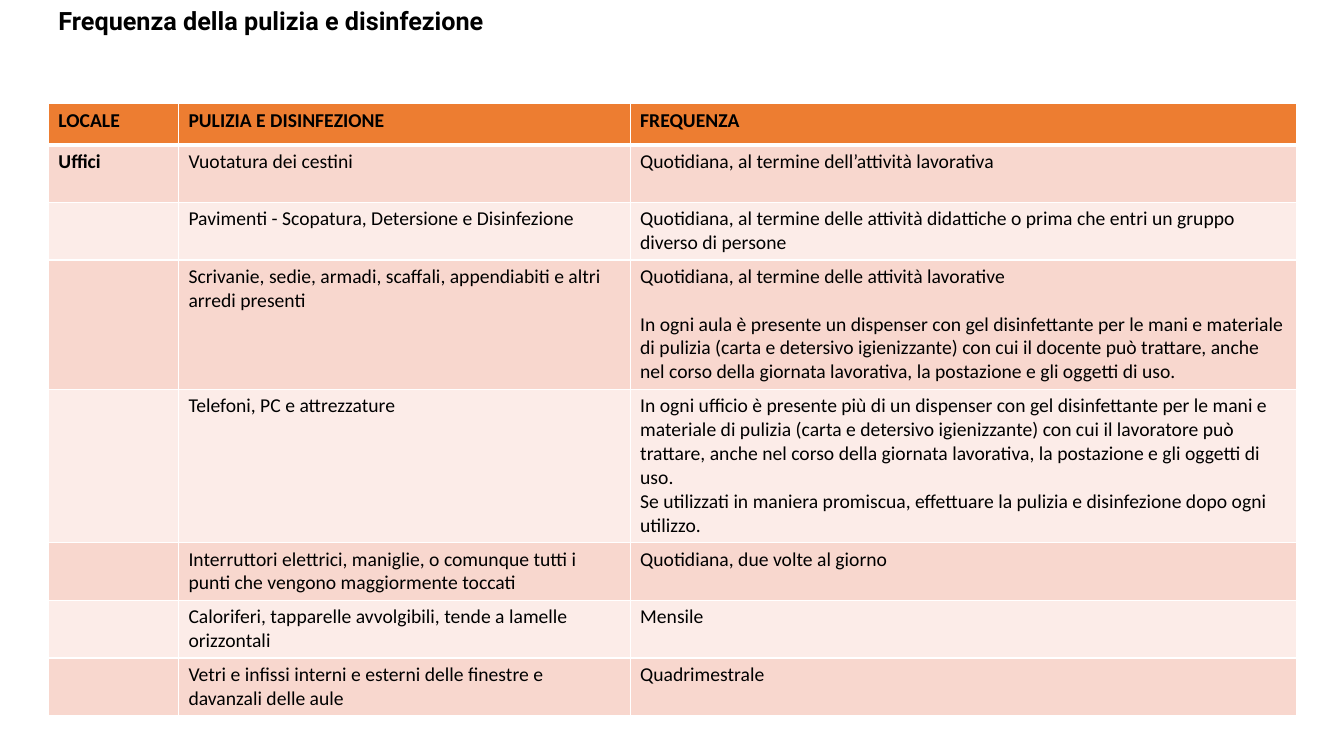
import pptx
import pptx.dml.color
import pptx.enum.text
import pptx.oxml
import pptx.oxml.ns
import pptx.util
from lxml import etree

TITLE = "Frequenza della pulizia e disinfezione"
HEADERS = ["LOCALE", "PULIZIA E DISINFEZIONE", "FREQUENZA"]
# Room, task, paragraphs on frequency, lines of text the row holds
ROWS = [
    ("Uffici", "Vuotatura dei cestini",
     ["Quotidiana, al termine dell’attività lavorativa"], 2),
    ("", "Pavimenti - Scopatura, Detersione e Disinfezione",
     ["Quotidiana, al termine delle attività didattiche o prima che entri un gruppo "
      "diverso di persone"], 2),
    ("", "Scrivanie, sedie, armadi, scaffali, appendiabiti e altri arredi presenti",
     ["Quotidiana, al termine delle attività lavorative",
      "In ogni aula è presente un dispenser con gel disinfettante per le mani e materiale "
      "di pulizia (carta e detersivo igienizzante) con cui il docente può trattare, anche "
      "nel corso della giornata lavorativa, la postazione e gli oggetti di uso."], 5),
    ("", "Telefoni, PC e attrezzature",
     ["In ogni ufficio è presente più di un dispenser con gel disinfettante per le mani e "
      "materiale di pulizia (carta e detersivo igienizzante) con cui il lavoratore può "
      "trattare, anche nel corso della giornata lavorativa, la postazione e gli oggetti di "
      "uso.",
      "Se utilizzati in maniera promiscua, effettuare la pulizia e disinfezione dopo ogni "
      "utilizzo."], 6),
    ("", "Interruttori elettrici, maniglie, o comunque tutti i punti che vengono "
     "maggiormente toccati", ["Quotidiana, due volte al giorno"], 2),
    ("", "Caloriferi, tapparelle avvolgibili, tende a lamelle orizzontali", ["Mensile"], 2),
    ("", "Vetri e infissi interni e esterni delle finestre e davanzali delle aule",
     ["Quadrimestrale"], 2),
]
SPACED_ROW = 3  # its second paragraph stands one blank line lower
COLORS = {"text": "000000", "header": "ED7D31", "odd": "F8D7CE", "even": "FCECE8",
          "border": "FFFFFF"}

LEFT, TABLE_TOP = 0.48, 1.03
COLUMN_WIDTHS = [1.29, 4.48, 6.61]
HEADER_HEIGHT, CELL_PADDING = 0.41, 0.1
TEXT_SIZE = 14
LINE_HEIGHT = TEXT_SIZE * 1.2 / 72


def add_run(paragraph, text, font_name, size, bold):
    run = paragraph.add_run()
    run.text = text
    run.font.name = font_name
    run.font.size = pptx.util.Pt(size)
    run.font.bold = bold
    run.font.color.rgb = pptx.dml.color.RGBColor.from_string(COLORS["text"])


def set_borders(cell, widths):
    """Draw cell borders; widths maps each edge (L, R, T, B) to points."""
    properties = cell._tc.get_or_add_tcPr()
    for edge, width in widths.items():
        line = etree.SubElement(properties, pptx.oxml.ns.qn("a:ln" + edge),
                                w=str(pptx.util.Pt(width)))
        fill = etree.SubElement(line, pptx.oxml.ns.qn("a:solidFill"))
        etree.SubElement(fill, pptx.oxml.ns.qn("a:srgbClr"), val=COLORS["border"])


def fill_cell(cell, texts, row, bold, space_before):
    set_borders(cell, {"L": 1, "R": 1, "T": 3 if row == 1 else 1, "B": 3 if row == 0 else 1})
    band = "header" if row == 0 else "odd" if row % 2 else "even"
    cell.fill.solid()
    cell.fill.fore_color.rgb = pptx.dml.color.RGBColor.from_string(COLORS[band])
    for index, text in enumerate(texts):
        frame = cell.text_frame
        paragraph = frame.add_paragraph() if index else frame.paragraphs[0]
        if index and space_before:
            paragraph.space_before = pptx.util.Pt(space_before)
        if text:
            add_run(paragraph, text, "Calibri", TEXT_SIZE, bold)


def add_title(slide):
    title = slide.shapes.title
    title.left, title.top = pptx.util.Inches(LEFT), 0
    title.width, title.height = pptx.util.Inches(4.75), pptx.util.Inches(0.4)
    frame = title.text_frame
    frame.word_wrap = False
    frame.auto_size = pptx.enum.text.MSO_AUTO_SIZE.NONE
    frame.vertical_anchor = pptx.enum.text.MSO_ANCHOR.TOP
    paragraph = frame.paragraphs[0]
    paragraph.alignment = pptx.enum.text.PP_ALIGN.LEFT
    add_run(paragraph, TITLE, "Roboto", 18, True)


def add_cleaning_table(slide):
    heights = [HEADER_HEIGHT] + [CELL_PADDING + row[-1] * LINE_HEIGHT for row in ROWS]
    table = slide.shapes.add_table(
        len(heights), len(COLUMN_WIDTHS), pptx.util.Inches(LEFT), pptx.util.Inches(TABLE_TOP),
        pptx.util.Inches(sum(COLUMN_WIDTHS)), pptx.util.Inches(sum(heights))).table
    for column, width in zip(table.columns, COLUMN_WIDTHS):
        column.width = pptx.util.Inches(width)
    contents = [[[header] for header in HEADERS]]
    contents += [[[room], [task], frequency] for room, task, frequency, _ in ROWS]
    for row, (cells, height) in enumerate(zip(contents, heights)):
        table.rows[row].height = pptx.util.Inches(height)
        gap = LINE_HEIGHT * 72 if row == SPACED_ROW else 0
        for column, texts in enumerate(cells):
            fill_cell(table.cell(row, column), texts, row, row == 0 or column == 0, gap)


def main():
    presentation = pptx.Presentation()
    presentation.slide_width = pptx.util.Inches(13.33)
    presentation.slide_height = pptx.util.Inches(7.5)
    slide = presentation.slides.add_slide(presentation.slide_layouts[5])
    add_title(slide)
    add_cleaning_table(slide)
    presentation.save("out.pptx")


if __name__ == "__main__":
    main()
